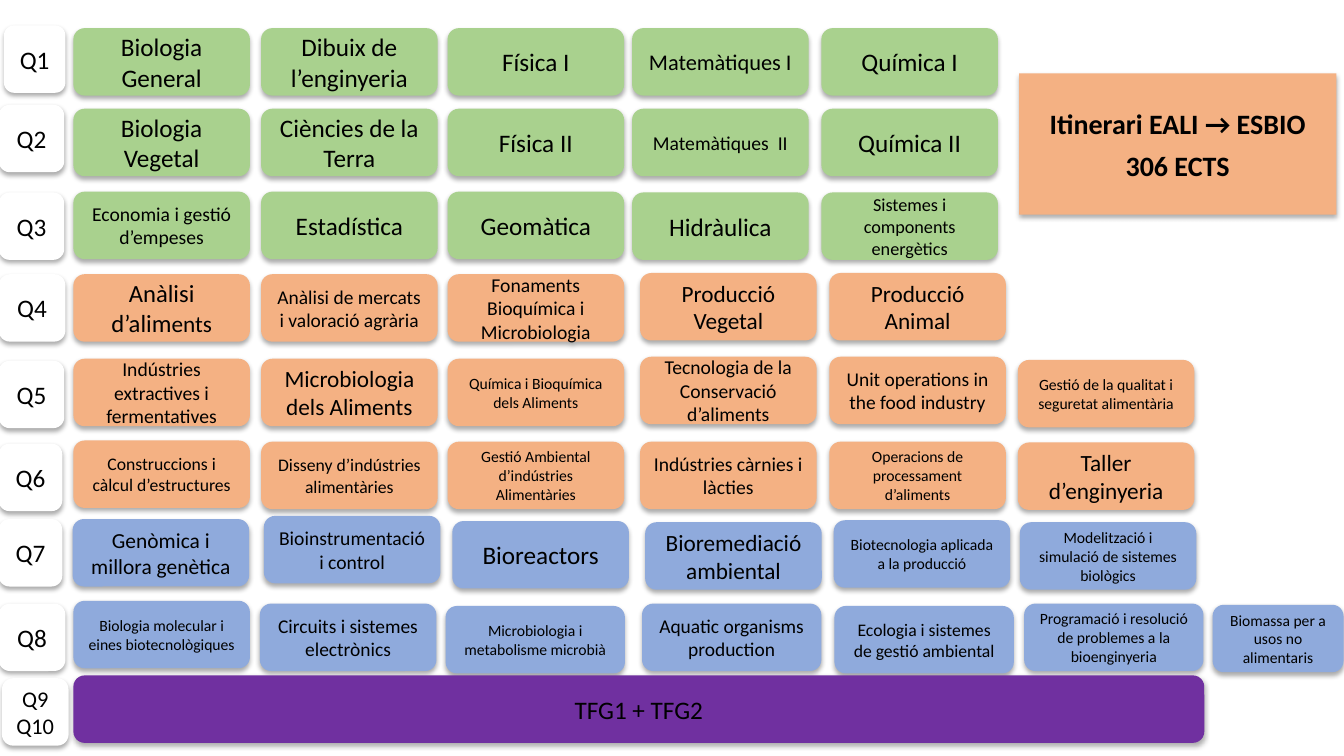
"""Builds a one-slide curriculum map of courses by term, from Q1 to Q10."""
from lxml import etree
from pptx import Presentation
from pptx.dml.color import RGBColor
from pptx.enum.shapes import MSO_SHAPE
from pptx.enum.text import MSO_ANCHOR, MSO_AUTO_SIZE, PP_ALIGN
from pptx.oxml import parse_xml
from pptx.oxml.ns import nsdecls, qn
from pptx.util import Cm, Pt

ROUNDED = MSO_SHAPE.ROUNDED_RECTANGLE
MIDDLE = MSO_ANCHOR.MIDDLE
NO_AUTOFIT = MSO_AUTO_SIZE.NONE
CENTER = PP_ALIGN.CENTER

FONT = "Calibri"
BLACK = RGBColor(0x00, 0x00, 0x00)
WHITE = RGBColor(0xFF, 0xFF, 0xFF)
GREEN = RGBColor(0xA9, 0xD1, 0x8E)
ORANGE = RGBColor(0xF4, 0xB1, 0x83)
BLUE = RGBColor(0x8F, 0xAA, 0xDC)
PURPLE = RGBColor(0x70, 0x30, 0xA0)

BOX_HEIGHT = 1.7
COURSE_WIDTH = 4.45
WIDE = 4.52
COMMON_LEFTS = (1.85, 6.58, 11.28, 15.93, 20.7)
FOOD_LEFTS = (1.85, 6.58, 11.28, 16.13, 20.9, 25.65)
BIO_LEFTS = (1.83, 6.65, 11.4, 16.26, 21.01, 25.7)
LAST_LEFTS = (1.85, 6.55, 11.23, 16.18, 21.03, 25.81, 30.56)
EQUAL_WIDTHS = (COURSE_WIDTH,) * 6
LAST_WIDTHS = (COURSE_WIDTH, COURSE_WIDTH, WIDE, WIDE, WIDE, WIDE, 3.3)

# Each term: label, label place (left, top, width), colour, lefts, widths, courses (top, runs).
TERMS = [
    ("Q1", (0.1, 0.64, 1.55), GREEN, COMMON_LEFTS, EQUAL_WIDTHS, [
        (0.71, ("Biologia General", 18)),
        (0.71, ("Dibuix de l’enginyeria", 18)),
        (0.71, ("Física I", 18)),
        (0.71, ("Matemàtiques I", 16)),
        (0.71, ("Química I", 18))]),
    ("Q2", (-0.03, 2.64, 1.65), GREEN, COMMON_LEFTS, EQUAL_WIDTHS, [
        (2.74, ("Biologia Vegetal", 18)),
        (2.74, ("Ciències de la Terra", 18)),
        (2.74, ("Física II", 18)),
        (2.74, ("Matemàtiques  II", 14)),
        (2.74, ("Química II", 18))]),
    ("Q3", (-0.03, 4.85, 1.65), GREEN, COMMON_LEFTS, EQUAL_WIDTHS, [
        (4.83, ("Economia i gestió d’empeses", 14)),
        (4.83, ("Estadística", 18)),
        (4.83, ("Geomàtica", 18)),
        (4.85, ("Hidràulica", 18)),
        (4.85, ("Sistemes i components energètics", 13))]),
    ("Q4", (-0.03, 6.91, 1.68), ORANGE, FOOD_LEFTS, EQUAL_WIDTHS, [
        (6.91, ("Anàlisi d’alim", 17.6), ("ents", 16.6)),
        (6.91, ("Anàlisi de mercats i valoració agrària", 13.9)),
        (6.91, ("Fonaments Bioquímica i Microbiologia", 14)),
        (6.88, ("Producció Vegetal", 16.6)),
        (6.88, ("Producció Animal", 16.6))]),
    ("Q5", (-0.03, 9.09, 1.65), ORANGE, FOOD_LEFTS, EQUAL_WIDTHS, [
        (9.04, ("Indústries extractives i fermentatives", 14)),
        (9.04, ("Microbiologia dels Aliments", 16.6)),
        (9.04, ("Química i Bioquímica dels Aliments", 11.2)),
        (8.99, ("Tecnologia de la Conservació d’aliments", 14)),
        (8.99, ("Unit operations in the food industry", 13.9)),
        (9.07, ("Gestió de la qualitat i seguretat alimentària", 11.2))]),
    ("Q6", (-0.03, 11.18, 1.6), ORANGE, FOOD_LEFTS, EQUAL_WIDTHS, [
        (11.1, ("Construccions i càlcul d’estructures", 12.6)),
        (11.13, ("Disseny d’indústries alimentàries", 12.6)),
        (11.13, ("Gestió Ambiental d’indústries Alimentàries", 11.2)),
        (11.13, ("Indústries càrnies i làcties", 14)),
        (11.13, ("Operacions de processament d’aliments", 11.2)),
        (11.15, ("Taller d’enginyeria", 16.6))]),
    ("Q7", (-0.03, 13.08, 1.6), BLUE, BIO_LEFTS, EQUAL_WIDTHS, [
        (13.08, ("Genòmica i millora genètica", 15.3)),
        (13.0, ("Bioinstrumentació i control", 14)),
        (13.13, ("Bioreactors", 18)),
        (13.16, ("Bioremediació ambiental", 16.6)),
        (13.11, ("Biotecnologia aplicada a la producció", 11.2)),
        (13.16, ("Modelització i simulació de sistemes biològics", 11.2))]),
    ("Q8", (-0.03, 15.21, 1.68), BLUE, LAST_LEFTS, LAST_WIDTHS, [
        (15.14, ("Biologia molecular i eines biotecnològiques", 11.2)),
        (15.21, ("Circuits i sistemes electrònics", 13.9)),
        (15.27, ("Microbiologia i metabolisme microbià", 11.2)),
        (15.21, ("Aquatic organisms production", 13.9)),
        (15.27, ("Ecologia i sistemes de gestió ambiental", 12.6)),
        (15.21, ("Programació i resolució de problemes a la bioenginyeria", 11.2)),
        (15.24, ("Biomassa per a usos no alimentaris", 11.1))]),
]


def add_soft_shadow(shape):
    """Give a shape a soft shadow falling straight down."""
    shape.shadow.inherit = False
    effects = shape._element.spPr.find(qn("a:effectLst"))
    shadow = etree.SubElement(effects, qn("a:outerShdw"), blurRad="44450",
                              dist="27940", dir="5400000", rotWithShape="0")
    color = etree.SubElement(shadow, qn("a:srgbClr"), val="000000")
    etree.SubElement(color, qn("a:alpha"), val="32000")


def style_box(shape, color):
    """Fill a shape, hide its outline and add the shadow."""
    shape.fill.solid()
    shape.fill.fore_color.rgb = color
    shape.line.fill.background()
    add_soft_shadow(shape)


def write_text(shape, paragraphs, bold=False, space_before=0):
    """Write centred paragraphs, each a list of (text, size) runs."""
    tf = shape.text_frame
    tf.word_wrap = True
    tf.auto_size = NO_AUTOFIT
    tf.vertical_anchor = MIDDLE
    for index, runs in enumerate(paragraphs):
        p = tf.paragraphs[0] if index == 0 else tf.add_paragraph()
        p.alignment = CENTER
        p.space_before = Pt(space_before)
        for text, size in runs:
            r = p.add_run()
            r.text = text
            r.font.name = FONT
            r.font.size = Pt(size)
            r.font.bold = bold
            r.font.color.rgb = BLACK


def add_box(s, left, top, width, color, paragraphs):
    """Add one rounded box with text."""
    sp = s.shapes.add_shape(ROUNDED, Cm(left), Cm(top), Cm(width), Cm(BOX_HEIGHT))
    style_box(sp, color)
    write_text(sp, paragraphs)


def set_title(s):
    """Turn the title placeholder into the rounded itinerary box."""
    title = s.shapes.title
    title.left, title.top, title.width, title.height = Cm(25.68), Cm(1.85), Cm(8), Cm(3.56)
    title._element.spPr.append(parse_xml(
        f'<a:prstGeom {nsdecls("a")} prst="roundRect"><a:avLst/></a:prstGeom>'))
    style_box(title, ORANGE)
    write_text(title, [[("Itinerari EALI → ESBIO", 20)], [("306 ECTS", 20)]],
               bold=True, space_before=6)


def add_term(s, label, place, color, lefts, widths, courses):
    """Add a term label and its row of courses."""
    add_box(s, *place, WHITE, [[(label, 18)]])
    for left, width, (top, *runs) in zip(lefts, widths, courses):
        add_box(s, left, top, width, color, [runs])


def main():
    """Build and save the slide."""
    prs = Presentation()
    prs.slide_width, prs.slide_height = Cm(33.87), Cm(19.05)
    s = prs.slides.add_slide(prs.slide_layouts[5])
    set_title(s)
    for term in TERMS:
        add_term(s, *term)
    add_box(s, 0.05, 17.09, 1.68, WHITE, [[("Q9", 16)], [("Q10", 16)]])
    add_box(s, 1.85, 17.02, 28.5, PURPLE, [[("TFG1 + TFG2", 18)]])
    prs.save("out.pptx")


if __name__ == "__main__":
    main()
